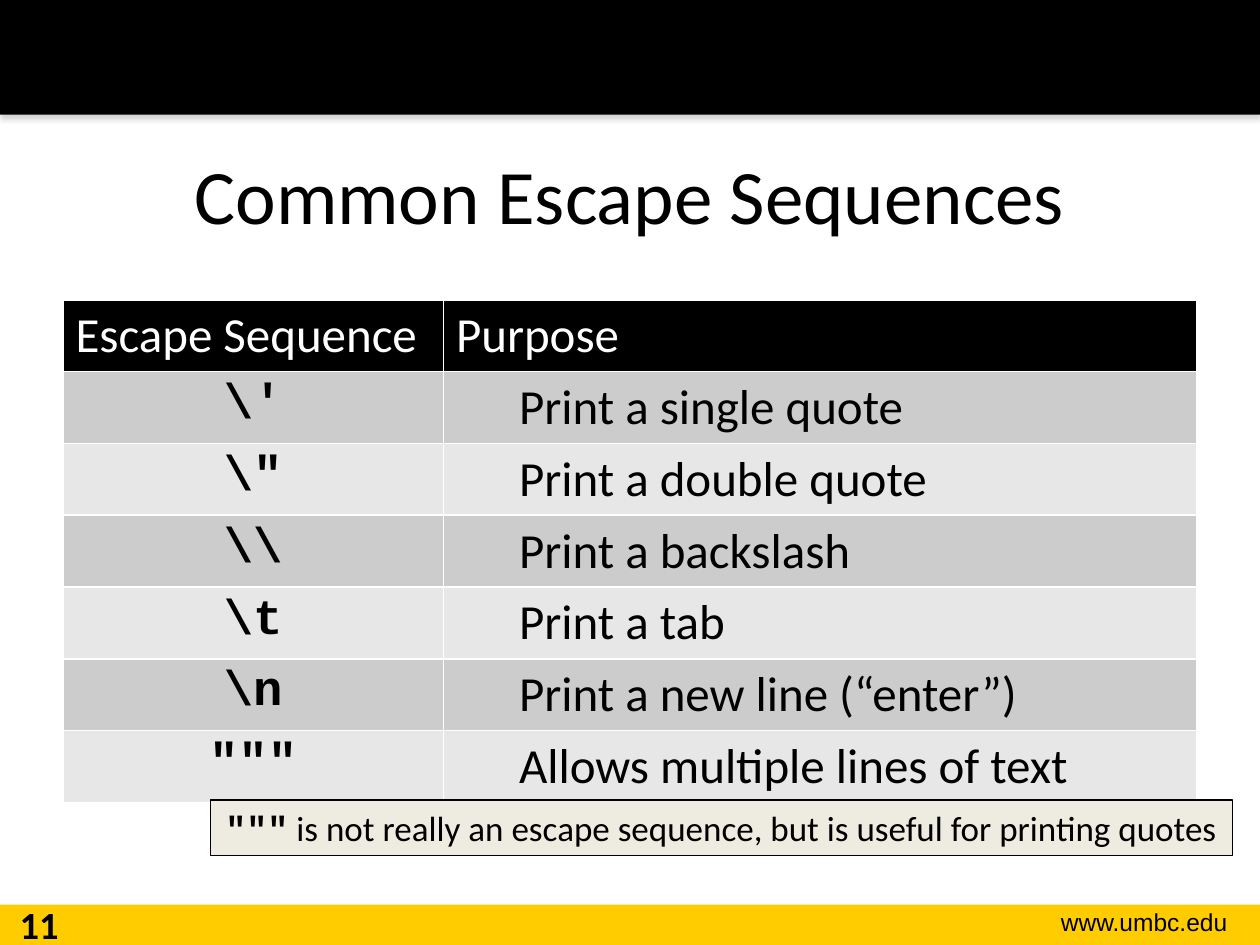
import pptx
import pptx.dml.color
import pptx.enum.shapes
import pptx.enum.text
import pptx.oxml
import pptx.oxml.ns
import pptx.util

Inches = pptx.util.Inches
Pt = pptx.util.Pt
ALIGN = pptx.enum.text.PP_ALIGN
ANCHOR = pptx.enum.text.MSO_ANCHOR
RECT = pptx.enum.shapes.MSO_SHAPE.RECTANGLE
NS = pptx.oxml.ns.nsdecls("a")

COLORS = {
    "black": "000000",
    "white": "FFFFFF",
    "gold": "FFCC00",
    "cream": "EEECE1",
    "dark_band": "CCCCCC",
    "light_band": "E7E7E7",
}


def rgb(name):
    return pptx.dml.color.RGBColor.from_string(COLORS[name])


def write(p, pieces, size, color="black", align=ALIGN.LEFT):
    """Fill a paragraph with (text, font name, bold) pieces."""
    p.alignment = align
    for text, font, bold in pieces:
        r = p.add_run()
        r.text = text
        r.font.name = font
        r.font.size = Pt(size)
        r.font.bold = bold
        r.font.color.rgb = rgb(color)


prs = pptx.Presentation()
prs.slide_width = Inches(10)
prs.slide_height = Inches(7.5)
s = prs.slides.add_slide(prs.slide_layouts[6])

# Footer and header bars
for top, height, color in [(7.18, 0.32, "gold"), (0, 0.91, "black")]:
    bar = s.shapes.add_shape(RECT, 0, Inches(top), Inches(10), Inches(height))
    bar.shadow.inherit = False
    bar.fill.solid()
    bar.fill.fore_color.rgb = rgb(color)
    bar.line.fill.background()

# The header bar, last in the loop, casts a soft shadow downwards
effects = bar._element.spPr.find(pptx.oxml.ns.qn("a:effectLst"))
effects.append(pptx.oxml.parse_xml(
    f'<a:outerShdw {NS} blurRad="{Pt(3.1)}" dist="{Pt(1.8)}" dir="5400000" rotWithShape="0">'
    '<a:srgbClr val="808080"><a:alpha val="35000"/></a:srgbClr></a:outerShdw>'))

# Title, web address and page number
labels = [
    ((0.5, 0.91, 9, 1.25), "Common Escape Sequences", "Calibri", 44, False, ALIGN.CENTER, ANCHOR.MIDDLE),
    ((7.85, 7.15, 1.99, 0.34), "www.umbc.edu", "Arial", 14, False, ALIGN.RIGHT, ANCHOR.TOP),
    ((0, 7.1, 0.62, 0.4), "11", "Calibri", 22, True, ALIGN.CENTER, ANCHOR.TOP),
]
for place, text, font, size, bold, align, anchor in labels:
    tf = s.shapes.add_textbox(*map(Inches, place)).text_frame
    tf.word_wrap = True
    tf.vertical_anchor = anchor
    write(tf.paragraphs[0], [(text, font, bold)], size, align=align)

# Table of escape sequences
rows = [
    ("Escape Sequence", "Purpose"),
    ("\\'", "Print a single quote"),
    ('\\"', "Print a double quote"),
    ("\\\\", "Print a backslash"),
    ("\\t", "Print a tab"),
    ("\\n", "Print a new line (“enter”)"),
    ('"""', "Allows multiple lines of text"),
]
table = s.shapes.add_table(len(rows), 2, Inches(0.5), Inches(2.38), Inches(9), Inches(3.97)).table
for column, width in zip(table.columns, [3.02, 5.98]):
    column.width = Inches(width)

for i, row in enumerate(rows):
    table.rows[i].height = Inches(0.57)
    for j, text in enumerate(row):
        cell = table.cell(i, j)
        p = cell.text_frame.paragraphs[0]
        if i == 0:
            band = "black"
            write(p, [(text, "Calibri", False)], 28, "white")
        else:
            band = "dark_band" if i % 2 else "light_band"
            if j == 0:
                write(p, [(text, "Courier New", True)], 28, align=ALIGN.CENTER)
            else:
                cell.margin_left = Inches(0.6)
                write(p, [(text, "Calibri", False)], 28)
        tcPr = cell._tc.get_or_add_tcPr()
        for side in ["lnL", "lnR", "lnT", "lnB"]:
            tcPr.append(pptx.oxml.parse_xml(
                f'<a:{side} {NS} w="{Pt(1)}"><a:solidFill>'
                f'<a:srgbClr val="{COLORS["white"]}"/></a:solidFill></a:{side}>'))
        cell.fill.solid()
        cell.fill.fore_color.rgb = rgb(band)

# Note below the table
note = s.shapes.add_shape(RECT, Inches(1.67), Inches(6.35), Inches(8.11), Inches(0.44))
note.shadow.inherit = False
note.fill.solid()
note.fill.fore_color.rgb = rgb("cream")
note.line.color.rgb = rgb("black")
note.line.width = Pt(0.75)
tf = note.text_frame
tf.word_wrap = False
tf.vertical_anchor = ANCHOR.TOP
write(tf.paragraphs[0], [
    ('"""', "Courier New", True),
    (" is not really an escape sequence, but is useful for printing quotes", "Calibri", False),
], 20, align=ALIGN.CENTER)

prs.save("out.pptx")
